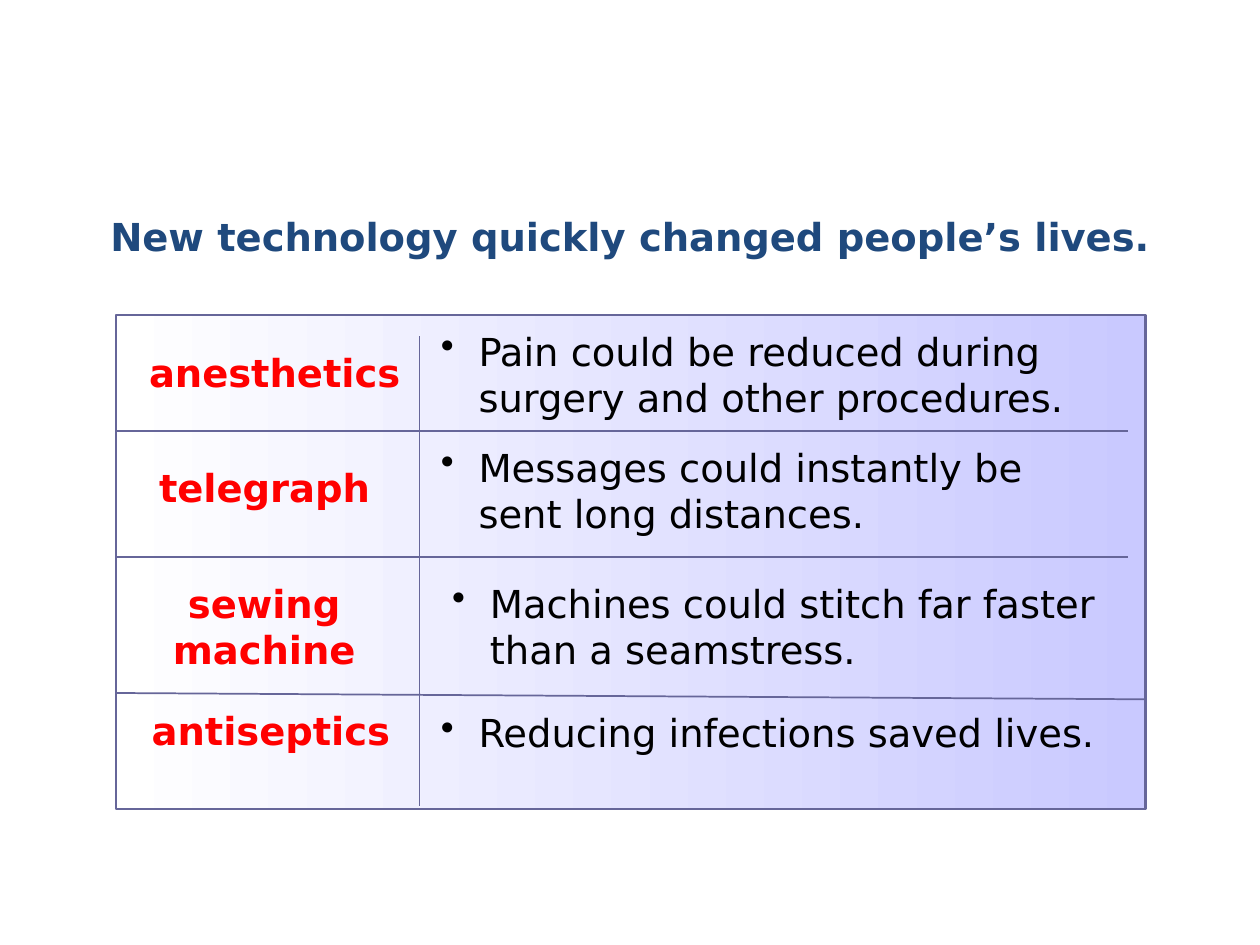
from lxml import etree
from pptx import Presentation
from pptx.dml.color import RGBColor
from pptx.enum.shapes import MSO_CONNECTOR, MSO_SHAPE
from pptx.enum.text import MSO_ANCHOR, PP_ALIGN
from pptx.oxml.ns import qn
from pptx.util import Inches, Pt

RECT = MSO_SHAPE.RECTANGLE
LINE = MSO_CONNECTOR.STRAIGHT
TOP = MSO_ANCHOR.TOP
LEFT, CENTER = PP_ALIGN.LEFT, PP_ALIGN.CENTER
WHITE = RGBColor(0xFF, 0xFF, 0xFF)
LILAC = RGBColor(0xC9, 0xC9, 0xFF)
SLATE = RGBColor(0x66, 0x66, 0x99)
RED = RGBColor(0xFF, 0x00, 0x00)
BLACK = RGBColor(0x00, 0x00, 0x00)
NAVY = RGBColor(0x1F, 0x49, 0x7D)


class Board:
    font = "DejaVu Sans"
    size = Pt(22)
    inset = Inches(0.1)

    def __init__(self, slide):
        self.slide = slide

    def panel(self, x, y, w, h):
        box = self.slide.shapes.add_shape(
            RECT, Inches(x), Inches(y), Inches(w), Inches(h))
        box.shadow.inherit = False
        box.fill.gradient()
        box.fill.gradient_angle = 0
        for stop, color in zip(box.fill.gradient_stops, (WHITE, LILAC)):
            stop.color.rgb = color
        box.line.color.rgb = SLATE
        box.line.width = Pt(1.5)

    def rule(self, x1, y1, x2, y2):
        rule = self.slide.shapes.add_connector(
            LINE, Inches(x1), Inches(y1), Inches(x2), Inches(y2))
        rule.line.color.rgb = SLATE
        rule.line.width = Pt(1)
        etree.SubElement(rule._element.spPr, qn("a:effectLst"))

    def text(self, words, x, y, w, h, color, bold=True, align=CENTER):
        box = self.slide.shapes.add_textbox(
            Inches(x), Inches(y), Inches(w), Inches(h))
        frame = box.text_frame
        frame.word_wrap = True
        frame.vertical_anchor = TOP
        frame.margin_left = frame.margin_right = self.inset
        frame.margin_top = frame.margin_bottom = self.inset
        para = frame.paragraphs[0]
        para.text = words
        para.alignment = align
        para.font.name = self.font
        para.font.size = self.size
        para.font.bold = bold
        para.font.color.rgb = color
        return para

    def bullet(self, words, x, y, w, h):
        para = self.text(words, x, y, w, h, BLACK, False, LEFT)
        props = para._p.get_or_add_pPr()
        props.set("marL", str(Inches(0.37)))
        props.set("indent", str(Inches(-0.3)))
        mark = etree.Element(qn("a:buChar"), char="•")
        props.insert(0, mark)


ROWS = [
    ("anesthetics", 1, 2.67, 0.75,
     "Pain could be reduced during surgery and other procedures.",
     3.33, 2.5, 1.15),
    ("telegraph", 0.92, 3.58, 1.15,
     "Messages could instantly be \nsent long distances.",
     3.33, 3.42, 1.15),
    ("sewing \nmachine ", 0.97, 4.5, 1.15,
     "Machines could stitch far faster than a seamstress.",
     3.42, 4.5, 1.15),
    ("antiseptics", 0.97, 5.51, 0.79,
     "Reducing infections saved lives.",
     3.33, 5.53, 0.79),
]
RULES = [
    (3.33, 2.67, 3.33, 6.4),
    (0.92, 3.42, 8.95, 3.42),
    (0.92, 4.42, 8.95, 4.42),
    (0.92, 5.5, 9.08, 5.55),
]


def main():
    deck = Presentation()
    deck.slide_width, deck.slide_height = Inches(10), Inches(7.5)
    board = Board(deck.slides.add_slide(deck.slide_layouts[6]))
    board.panel(0.92, 2.5, 8.17, 3.92)
    for ends in RULES:
        board.rule(*ends)
    for term, x, y, h, gain, left, top, tall in ROWS:
        board.text(term, x, y, 2.36, h, RED)
        board.bullet(gain, left, top, 5.67, tall)
    board.text("New technology quickly changed people’s lives.",
               0.5, 1.59, 9, 0.63, NAVY)
    deck.save("out.pptx")


if __name__ == "__main__":
    main()
